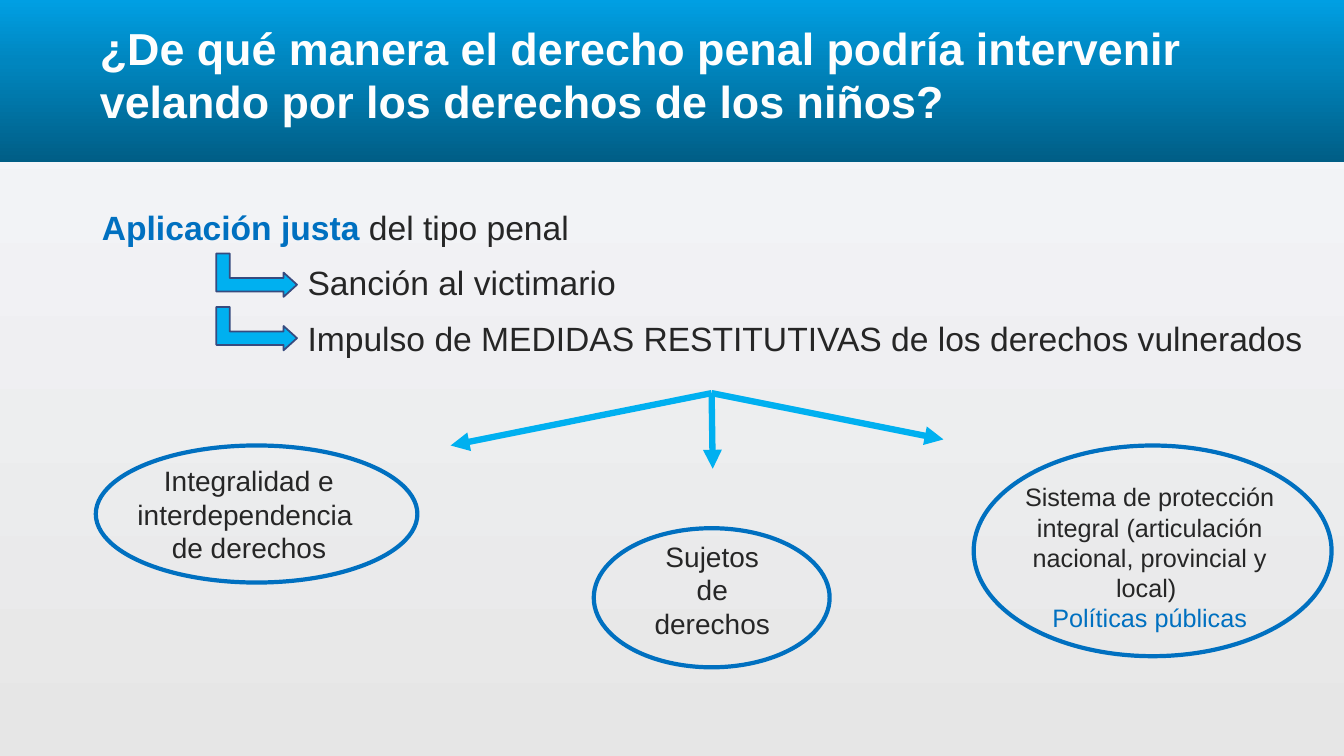
from copy import deepcopy
from lxml.etree import SubElement
from pptx import Presentation
from pptx.dml.color import RGBColor
from pptx.enum.shapes import MSO_CONNECTOR, MSO_SHAPE
from pptx.enum.text import MSO_ANCHOR, MSO_AUTO_SIZE, PP_ALIGN
from pptx.oxml.ns import qn
from pptx.util import Inches, Pt

HUES = {
    "deep": "005E86", "mid": "0086BF", "top": "009FE3",
    "pale": "F6F7FB", "grey": "E6E6E6", "white": "FEFEFE",
    "ink": "262626", "blue": "0070C0", "sky": "00B0F0", "edge": "374B7F",
}


def apply(target, values):
    for name, value in values.items():
        setattr(target, name, value)


def hue(name):
    return RGBColor.from_string(HUES[name])


class Board:
    font = "Arial"

    def __init__(self, deck):
        self.wide, self.high = deck.slide_width, deck.slide_height
        self.slide = deck.slides.add_slide(deck.slide_layouts[1])
        self.shapes = self.slide.shapes

    def place(self, x, y, w, h):
        return (self.across(x), self.down(y), self.across(w), self.down(h))

    def across(self, share):
        return int(self.wide * share / 100)

    def down(self, share):
        return int(self.high * share / 100)

    def shade(self, fill, root, stops, angle):
        fill.gradient()
        fill.gradient_angle = angle
        group = root.find(".//" + qn("a:gsLst"))
        while len(group) < len(stops):
            group.append(deepcopy(group[0]))
        for stop, (spot, name) in zip(fill.gradient_stops, stops):
            stop.position = spot
            stop.color.rgb = hue(name)

    def backdrop(self, stops):
        self.shade(self.slide.background.fill, self.slide.element, stops, 270)

    def band(self, box, stops):
        band = self.shapes.add_shape(MSO_SHAPE.RECTANGLE, *self.place(*box))
        band.shadow.inherit = False
        band.line.fill.background()
        self.shade(band.fill, band.element, stops, 90)
        self.shapes.element.insert(2, band.element)

    def form(self, kind, box, line, width, fill=None, turn=0, bends=()):
        form = self.shapes.add_shape(kind, *self.place(*box))
        form.shadow.inherit = False
        form.rotation = turn
        for spot, bend in enumerate(bends):
            form.adjustments[spot] = bend
        if fill:
            form.fill.solid()
            form.fill.fore_color.rgb = hue(fill)
        else:
            form.fill.background()
        form.line.color.rgb = hue(line)
        form.line.width = Pt(width)

    def letter(self, frame, paras, size, style, bold=False):
        for spot, runs in enumerate(paras):
            para = frame.add_paragraph() if spot else frame.paragraphs[0]
            apply(para, style)
            for text, name, *strong in runs:
                run = para.add_run()
                run.text = text
                apply(run.font, {"name": self.font, "size": Pt(size),
                                 "bold": bold or bool(strong)})
                run.font.color.rgb = hue(name)

    def settle(self, holder, box, frame, paras, size, style, bold=False):
        apply(holder, dict(zip(("left", "top", "width", "height"), self.place(*box))))
        apply(holder.text_frame, frame)
        self.letter(holder.text_frame, paras, size, style, bold)

    def title(self, box, text):
        frame = {"vertical_anchor": MSO_ANCHOR.MIDDLE, "auto_size": MSO_AUTO_SIZE.NONE}
        self.settle(self.shapes.title, box, frame, [[(text, "white")]], 32,
                    {"alignment": PP_ALIGN.LEFT}, True)

    def body(self, box, paras, indent):
        holder = self.slide.placeholders[1]
        style = {"space_before": Pt(4.8), "space_after": Pt(6)}
        self.settle(holder, box, {"auto_size": MSO_AUTO_SIZE.NONE}, paras, 24, style)
        for spot, para in enumerate(holder.text_frame.paragraphs):
            props = para._p.get_or_add_pPr()
            props.set("marL", str(self.across(indent) if spot else 0))
            props.set("indent", "0")
            SubElement(props, qn("a:buNone"))

    def label(self, box, paras, size):
        frame = self.shapes.add_textbox(*self.place(*box)).text_frame
        apply(frame, {"word_wrap": True, "auto_size": MSO_AUTO_SIZE.SHAPE_TO_FIT_TEXT})
        self.letter(frame, paras, size, {"alignment": PP_ALIGN.CENTER})

    def arrow(self, start, end):
        points = [*self.place(*start, *end)]
        arrow = self.shapes.add_connector(MSO_CONNECTOR.STRAIGHT, *points)
        arrow.line.color.rgb = hue("sky")
        arrow.line.width = Pt(4.5)
        line = arrow.element.spPr.find(qn("a:ln"))
        SubElement(line, qn("a:tailEnd"), type="triangle")
        SubElement(arrow.element.spPr, qn("a:effectLst"))


def main():
    deck = Presentation()
    apply(deck, {"slide_width": Inches(13.33), "slide_height": Inches(7.5)})
    board = Board(deck)
    board.backdrop([(0.03, "pale"), (1, "grey")])
    board.band((0, 0, 100, 21.47), [(0, "deep"), (0.62, "mid"), (1, "top")])
    board.title((6.68, 1.87, 86.7, 15.87),
                "¿De qué manera el derecho penal podría intervenir "
                "velando por los derechos de los niños?")
    board.body((6.83, 26.67, 92.25, 25.33), [
        [("Aplicación justa ", "blue", True), ("del tipo penal", "ink")],
        [("Sanción al victimario", "ink")],
        [("Impulso de MEDIDAS RESTITUTIVAS de los derechos vulnerados", "ink")],
    ], 15.3)
    for row in range(2):
        board.form(MSO_SHAPE.BENT_UP_ARROW, (17.48, 31.07 + 7.07 * row, 3.23, 10.67),
                   "edge", 1.25, "sky", 90, (0.31, 0.28, 0.31))

    ideas = [
        ((7.13, 58.93, 23.93, 18.13), (8.78, 60.67, 19.5, 14.8), 20,
         [[("Integralidad e", "ink")], [("interdependencia ", "ink")],
          [("de derechos", "ink")]], (33.53, 58.93)),
        ((44.18, 69.87, 17.55, 18.4), (47.63, 70.67, 10.73, 14.8), 20,
         [[("Sujetos de derechos", "ink")]], (53.03, 62)),
        ((72.45, 58.93, 26.63, 27.87), (74.1, 63.07, 22.88, 21.6), 18,
         [[("Sistema de protección integral (articulación nacional, "
            "provincial y local) ", "ink")],
          [("Políticas públicas", "blue")]], (70.2, 58.13)),
    ]
    for oval, box, size, paras, tip in ideas:
        board.form(MSO_SHAPE.OVAL, oval, "blue", 3)
        board.label(box, paras, size)
        board.arrow((52.95, 52), tip)
    deck.save("out.pptx")


if __name__ == "__main__":
    main()
